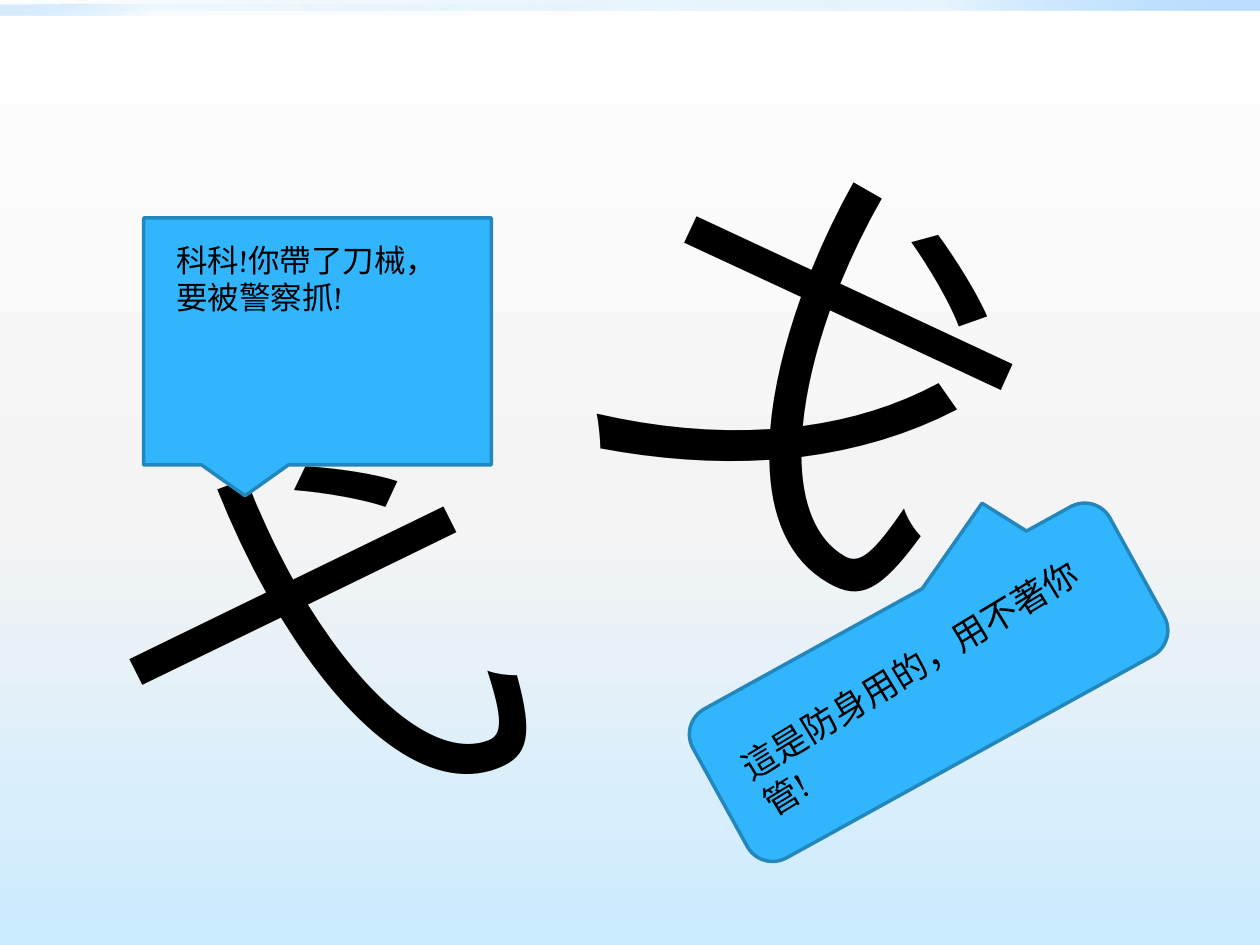
from dataclasses import dataclass

from lxml.etree import SubElement
from pptx import Presentation
from pptx.dml.color import RGBColor as Rgb
from pptx.enum.shapes import MSO_SHAPE as Kind
from pptx.enum.text import MSO_AUTO_SIZE as Fit
from pptx.oxml.ns import qn
from pptx.util import Inches, Pt


@dataclass(frozen=True)
class Theme:
    font: str = "Cambria"
    ink: str = "000000"
    fill: str = "31B6FD"
    edge: str = "2487BB"
    line: float = 2
    glyph: int = 225
    small: int = 18
    large: int = 20
    # Gradient stops: position, colour, opacity (all but colour in percent)
    sky: tuple = ((0, "FFFFFF", 100), (55, "F4F4F4", 100), (100, "CBEBFF", 100))
    band: tuple = ((0, "0092DF", 0), (75, "82C8FF", 20), (100, "BDDEFF", 100))
    glow: tuple = ((0, "0092DF", 0), (75, "82C8FF", 5), (100, "BDDEFF", 60))


class Page:
    """Draws on one slide, on a grid of 20 columns by 15 rows."""

    COLS, ROWS = 20, 15

    def __init__(self, deck, theme):
        self.theme = theme
        self.cell = deck.slide_width / self.COLS, deck.slide_height / self.ROWS
        self.slide = deck.slides.add_slide(deck.slide_layouts[6])

    def place(self, box):
        return [round(n * self.cell[i % 2]) for i, n in enumerate(box)]

    def blend(self, fill, owner, stops, angle):
        """Give a fill any number of stops and a clockwise angle."""
        fill.gradient()
        grad = next(owner.element.iter(qn("a:gradFill")))
        group = grad.find(qn("a:gsLst"))
        group.clear()
        for pos, color, alpha in stops:
            stop = SubElement(group, qn("a:gs"), pos=str(pos * 1000))
            tint = SubElement(stop, qn("a:srgbClr"), val=color)
            if alpha < 100:
                SubElement(tint, qn("a:alpha"), val=str(alpha * 1000))
        grad.find(qn("a:lin")).set("ang", str(angle * 60000))

    def back(self, stops, angle):
        self.blend(self.slide.background.fill, self.slide, stops, angle)

    def shape(self, kind, box):
        shape = self.slide.shapes.add_shape(kind, *self.place(box))
        shape.shadow.inherit = False
        return shape

    def bar(self, box, stops, angle):
        bar = self.shape(Kind.RECTANGLE, box)
        self.blend(bar.fill, bar, stops, angle)
        bar.line.fill.background()

    def bubble(self, kind, box, turn=0, adjust=()):
        bubble = self.shape(kind, box)
        bubble.rotation = turn
        for i, value in enumerate(adjust):
            bubble.adjustments[i] = value
        bubble.fill.solid()
        bubble.fill.fore_color.rgb = Rgb.from_string(self.theme.fill)
        bubble.line.color.rgb = Rgb.from_string(self.theme.edge)
        bubble.line.width = Pt(self.theme.line)

    def text(self, words, box, size, turn=0):
        label = self.slide.shapes.add_textbox(*self.place(box))
        label.rotation = turn
        frame = label.text_frame
        frame.word_wrap = True
        frame.auto_size = Fit.SHAPE_TO_FIT_TEXT
        run = frame.paragraphs[0].add_run()
        run.text = words
        run.font.name = self.theme.font
        run.font.size = Pt(size)
        run.font.color.rgb = Rgb.from_string(self.theme.ink)


def main():
    deck = Presentation()
    deck.slide_width, deck.slide_height = Inches(10), Inches(7.5)
    theme = Theme()
    page = Page(deck, theme)

    page.back(theme.sky, 90)
    page.bar((0, 0, 20, 0.16), theme.band, 315)
    page.bar((0, 0.08, 10, 0.16), theme.glow, 135)

    page.text("弋", (1.5, 5.76, 9.6, 7.78), theme.glyph, 338.8)
    page.text("戈", (9.46, 2.44, 8.98, 7.78), theme.glyph, 29.9)

    page.bubble(Kind.RECTANGULAR_CALLOUT, (2.28, 3.46, 5.52, 3.92))
    page.bubble(Kind.ROUNDED_RECTANGULAR_CALLOUT, (10.96, 9.48, 7.56, 2.7),
                151.1, (-0.28, 0.77, 0.17))

    page.text("科科!你帶了刀械，要被警察抓!", (2.6, 3.72, 4.88, 1.42), theme.small)
    page.text("這是防身用的，用不著你管!", (11.32, 10.04, 6.88, 1.54),
              theme.large, 328.6)

    deck.save("out.pptx")


if __name__ == "__main__":
    main()
